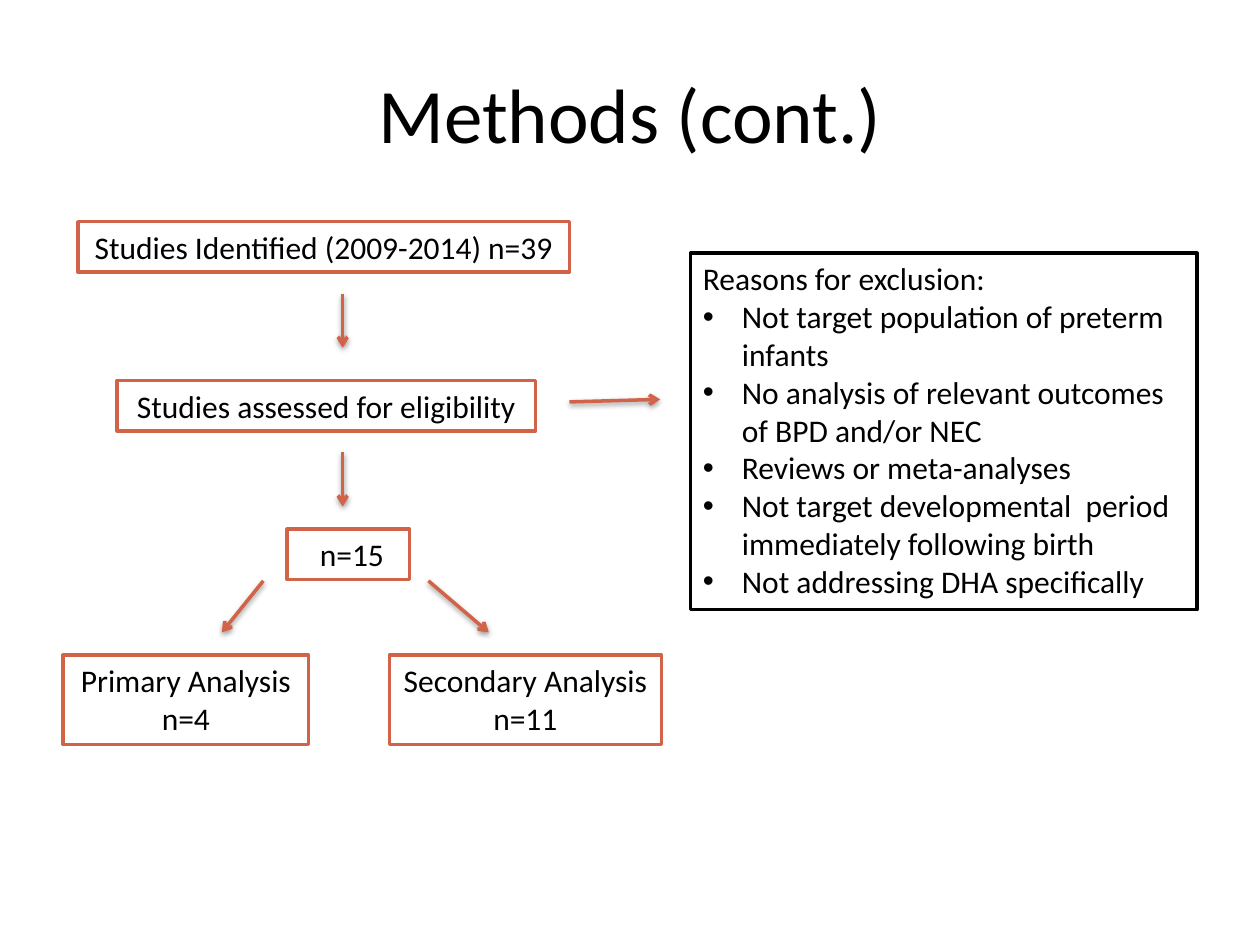
from lxml import etree
from pptx import Presentation
from pptx.dml.color import RGBColor as RGB
from pptx.enum.shapes import MSO_CONNECTOR as LINK, MSO_SHAPE as SHAPE
from pptx.enum.text import MSO_ANCHOR as ANCHOR, PP_ALIGN as ALIGN
from pptx.oxml.ns import qn
from pptx.util import Inches, Pt

COLORS = {"ink": "000000", "paper": "FFFFFF", "rust": "D16349"}
FONT = "Calibri"

STEPS = [
    ("Studies Identified (2009-2014) n=39", 0.62, 1.76, 3.9, 0.4),
    ("Studies assessed for eligibility", 0.93, 3.02, 3.32, 0.4),
    (" n=15", 2.28, 4.2, 0.97, 0.4),
    ("Primary Analysis n=4", 0.5, 5.2, 1.95, 0.71),
    ("Secondary Analysis n=11", 3.09, 5.2, 2.16, 0.71),
]
ARROWS = [
    (2.72, 2.33, 2.72, 2.76),
    (2.72, 3.59, 2.72, 4.02),
    (2.09, 4.61, 1.76, 5.02),
    (3.4, 4.61, 3.88, 5.02),
    (4.52, 3.19, 5.24, 3.17),
]
REASONS = [
    "Not target population of preterm infants",
    "No analysis of relevant outcomes of BPD and/or NEC",
    "Reviews or meta-analyses",
    "Not target developmental  period immediately following birth",
    "Not addressing DHA specifically",
]


def color(name):
    return RGB.from_string(COLORS[name])


def add_run(para, text, size=18):
    run = para.add_run()
    run.text = text
    run.font.name = FONT
    run.font.size = Pt(size)
    run.font.color.rgb = color("ink")


def add_title(slide, text):
    box = slide.shapes.add_textbox(*map(Inches, (0.5, 0.37, 9, 1.05)))
    frame = box.text_frame
    frame.word_wrap = True
    frame.vertical_anchor = ANCHOR.MIDDLE
    para = frame.paragraphs[0]
    para.alignment = ALIGN.CENTER
    add_run(para, text, 44)


def add_box(slide, area, edge):
    """Add an outlined box and return its text frame."""
    box = slide.shapes.add_shape(SHAPE.RECTANGLE, *map(Inches, area))
    box.shadow.inherit = False
    box.fill.solid()
    box.fill.fore_color.rgb = color("paper")
    box.line.color.rgb = color(edge)
    box.line.width = Pt(2)
    frame = box.text_frame
    frame.word_wrap = True
    frame.vertical_anchor = ANCHOR.TOP
    return frame


def add_step(slide, text, *area):
    para = add_box(slide, area, "rust").paragraphs[0]
    para.alignment = ALIGN.CENTER
    add_run(para, text)


def add_bullet(para):
    props = para._p.get_or_add_pPr()
    props.set("marL", str(Inches(0.31)))
    props.set("indent", str(Inches(-0.31)))
    etree.SubElement(props, qn("a:buFont"), typeface="Arial")
    etree.SubElement(props, qn("a:buChar"), char="•")


def add_reasons(slide, head, items):
    frame = add_box(slide, (5.48, 2.01, 4.02, 2.83), "ink")
    first = frame.paragraphs[0]
    first.alignment = ALIGN.LEFT
    add_run(first, head)
    for item in items:
        para = frame.add_paragraph()
        para.alignment = ALIGN.LEFT
        add_bullet(para)
        add_run(para, item)


def add_arrow(slide, *ends):
    link = slide.shapes.add_connector(LINK.STRAIGHT, *map(Inches, ends))
    link.line.color.rgb = color("rust")
    link.line.width = Pt(2)
    etree.SubElement(link.line._get_or_add_ln(), qn("a:tailEnd"), type="arrow")
    add_shadow(link)


def add_shadow(link):
    """Cast a soft shadow straight down."""
    effects = etree.SubElement(link._element.spPr, qn("a:effectLst"))
    shade = etree.SubElement(
        effects, qn("a:outerShdw"), blurRad=str(Pt(3.1)), dist=str(Pt(1.6)),
        dir="5400000", rotWithShape="0")
    tint = etree.SubElement(shade, qn("a:srgbClr"), val=COLORS["ink"])
    etree.SubElement(tint, qn("a:alpha"), val="38000")


def main():
    deck = Presentation()
    deck.slide_width, deck.slide_height = Inches(10), Inches(7.5)
    slide = deck.slides.add_slide(deck.slide_layouts[6])
    add_title(slide, "Methods (cont.)")
    for step in STEPS:
        add_step(slide, *step)
    add_reasons(slide, "Reasons for exclusion:", REASONS)
    for ends in ARROWS:
        add_arrow(slide, *ends)
    deck.save("out.pptx")


if __name__ == "__main__":
    main()
